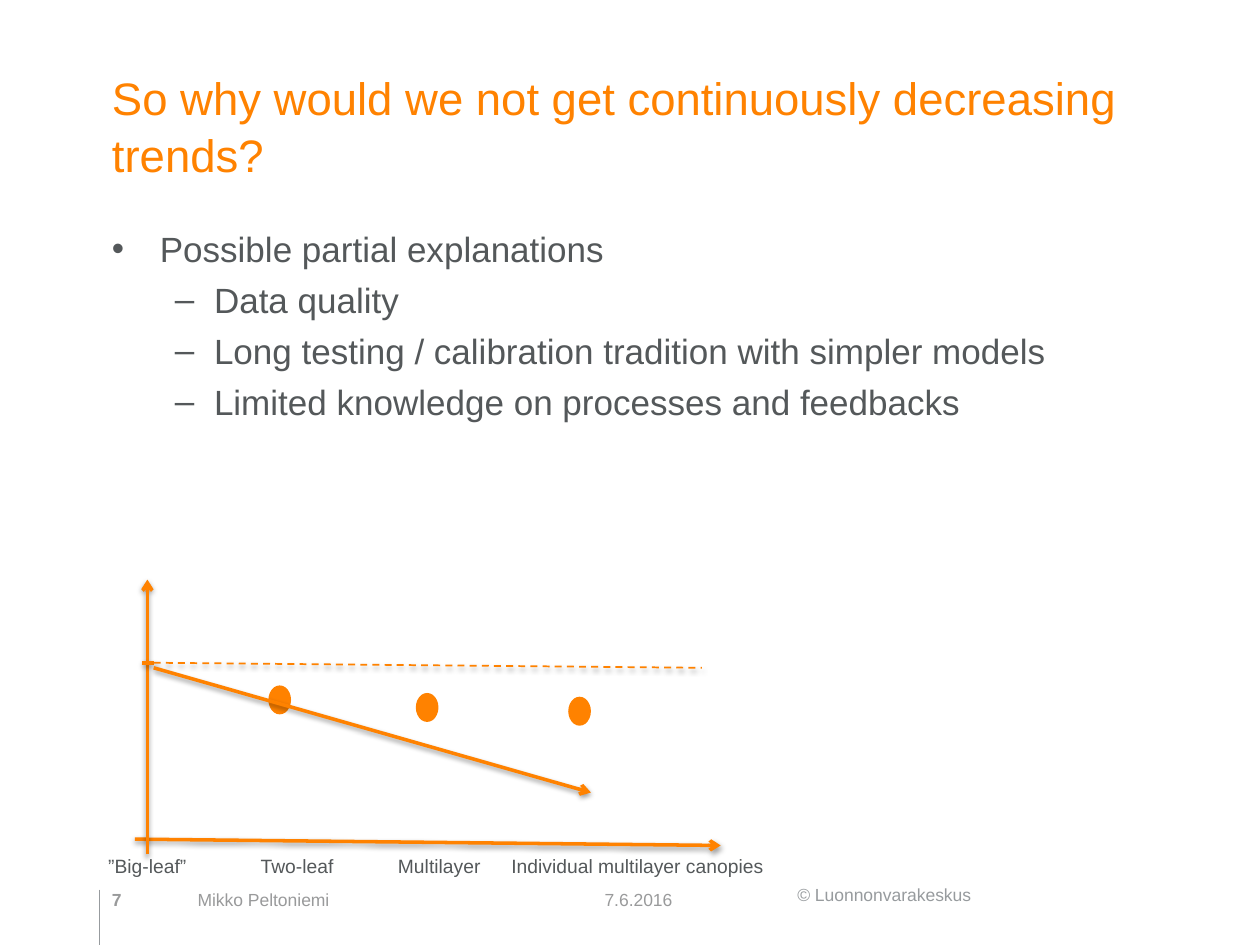
from dataclasses import dataclass

from lxml.etree import SubElement
from pptx import Presentation
from pptx.dml.color import RGBColor as Rgb
from pptx.enum.dml import MSO_LINE_DASH_STYLE as Dash
from pptx.enum.shapes import MSO_CONNECTOR as Connector, MSO_SHAPE as Shape
from pptx.enum.text import MSO_ANCHOR as Anchor
from pptx.oxml.ns import qn
from pptx.util import Emu, Inches, Pt


@dataclass(frozen=True)
class Theme:
    font: str = "Arial"
    accent: Rgb = Rgb(0xFF, 0x82, 0x00)
    body: Rgb = Rgb(0x54, 0x58, 0x5A)
    footer: Rgb = Rgb(0x99, 0x9A, 0x9B)
    credit: Rgb = Rgb(0x97, 0x9B, 0x9E)
    title_size: int = 26
    body_size: int = 20
    label_size: int = 11
    footer_size: int = 10
    spacing: float = 1.05


THEME = Theme()
LEFT = 0.79
CONTENT_WIDTH = 8.25
FOOTER_TOP = 6.97


def add_text(slide, box, lines, size, color, anchor=Anchor.TOP, bold=False):
    frame = slide.shapes.add_textbox(*map(Inches, box)).text_frame
    frame.word_wrap = True
    frame.vertical_anchor = anchor
    frame.text = "\n".join(lines)
    for paragraph in frame.paragraphs:
        for run in paragraph.runs:
            run.font.name = THEME.font
            run.font.size = Pt(size)
            run.font.bold = bold
            run.font.color.rgb = color
    return frame


def set_bullet(paragraph, char, indent, hanging):
    props = paragraph._p.get_or_add_pPr()
    props.set("marL", str(Inches(indent)))
    props.set("indent", str(-Inches(hanging)))
    SubElement(props, qn("a:buFont"), typeface=THEME.font)
    SubElement(props, qn("a:buChar"), char=char)


def set_tabs(paragraph, stops):
    tabs = SubElement(paragraph._p.get_or_add_pPr(), qn("a:tabLst"))
    for stop in stops:
        SubElement(tabs, qn("a:tab"), pos=str(Inches(stop)), algn="l")


def add_line(slide, start, end, color=THEME.accent, width=2,
             arrow=False, dash=None, shadow=True):
    connector = slide.shapes.add_connector(
        Connector.STRAIGHT, *map(Inches, (*start, *end)))
    connector.line.color.rgb = color
    connector.line.width = Pt(width)
    if dash:
        connector.line.dash_style = dash
    if arrow:
        SubElement(connector.line._get_or_add_ln(), qn("a:tailEnd"), type="arrow")
    effects = SubElement(connector._element.spPr, qn("a:effectLst"))
    if shadow:
        outer = SubElement(effects, qn("a:outerShdw"), blurRad=str(Pt(3.1)),
                           dist=str(Pt(1.6)), dir="5400000", rotWithShape="0")
        black = SubElement(outer, qn("a:srgbClr"), val="000000")
        SubElement(black, qn("a:alpha"), val="38000")


def add_point(slide, left, top):
    point = slide.shapes.add_shape(
        Shape.OVAL, *map(Inches, (left, top, 0.18, 0.23)))
    point.shadow.inherit = False
    point.fill.solid()
    point.fill.fore_color.rgb = THEME.accent
    point.line.fill.background()


def add_title(slide):
    title = add_text(slide, (LEFT, 0.89, CONTENT_WIDTH, 1.03),
                     ["So why would we not get continuously decreasing trends?"],
                     THEME.title_size, THEME.accent, Anchor.BOTTOM)
    title.margin_bottom = Inches(0.48)
    title.paragraphs[0].line_spacing = THEME.spacing


def add_explanations(slide):
    explanations = add_text(slide, (LEFT, 1.74, CONTENT_WIDTH, 4.5), [
        "Possible partial explanations",
        "Data quality",
        "Long testing / calibration tradition with simpler models",
        "Limited knowledge on processes and feedbacks",
    ], THEME.body_size, THEME.body)
    heading, *reasons = explanations.paragraphs
    set_bullet(heading, "•", 0.38, 0.38)
    heading.line_spacing = THEME.spacing
    for reason in reasons:
        reason.level = 1
        set_bullet(reason, "–", 0.81, 0.31)
        reason.line_spacing = THEME.spacing
        reason.space_before = Pt(0.2 * THEME.body_size)


def add_trend_sketch(slide):
    # Axes
    add_line(slide, (1.07, 6.66), (5.72, 6.71), arrow=True)
    add_line(slide, (1.17, 6.78), (1.17, 4.6), arrow=True)
    # Model types along the horizontal axis
    labels = ["”Big-leaf”", "Two-leaf", "Multilayer",
              "Individual multilayer canopies"]
    model_types = add_text(slide, (0.76, 6.73, 5.45, 0.59),
                           ["\t".join(labels)], THEME.label_size, THEME.body)
    set_tabs(model_types.paragraphs[0], (1.21, 2.3, 3.2))
    # Starting level, points and expected trend
    add_line(slide, (1.13, 5.26), (1.22, 5.26))
    add_line(slide, (1.22, 5.26), (5.57, 5.3), width=1, dash=Dash.DASH)
    for left, top in ((2.13, 5.44), (3.3, 5.5), (4.51, 5.53)):
        add_point(slide, left, top)
    add_line(slide, (1.22, 5.3), (4.69, 6.29), arrow=True)


def add_footer(slide):
    add_line(slide, (LEFT, 7.06), (LEFT, 7.5), THEME.credit, 0.75, shadow=False)
    add_text(slide, (6.23, FOOTER_TOP, 2.06, 0.27), ["© Luonnonvarakeskus"],
             THEME.footer_size, THEME.credit)
    for text, left, width, bold in (("7", LEFT, 0.49, True),
                                    ("7.6.2016", 4.7, 1.53, False),
                                    ("Mikko Peltoniemi", 1.47, 3.17, False)):
        add_text(slide, (left, FOOTER_TOP, width, 0.3), [text],
                 THEME.footer_size, THEME.footer, Anchor.BOTTOM, bold)


def main():
    deck = Presentation()
    deck.slide_width, deck.slide_height = Inches(10), Inches(7.5)
    slide = deck.slides.add_slide(deck.slide_layouts[6])
    add_footer(slide)
    add_title(slide)
    add_explanations(slide)
    add_trend_sketch(slide)
    deck.save("out.pptx")


if __name__ == "__main__":
    main()
